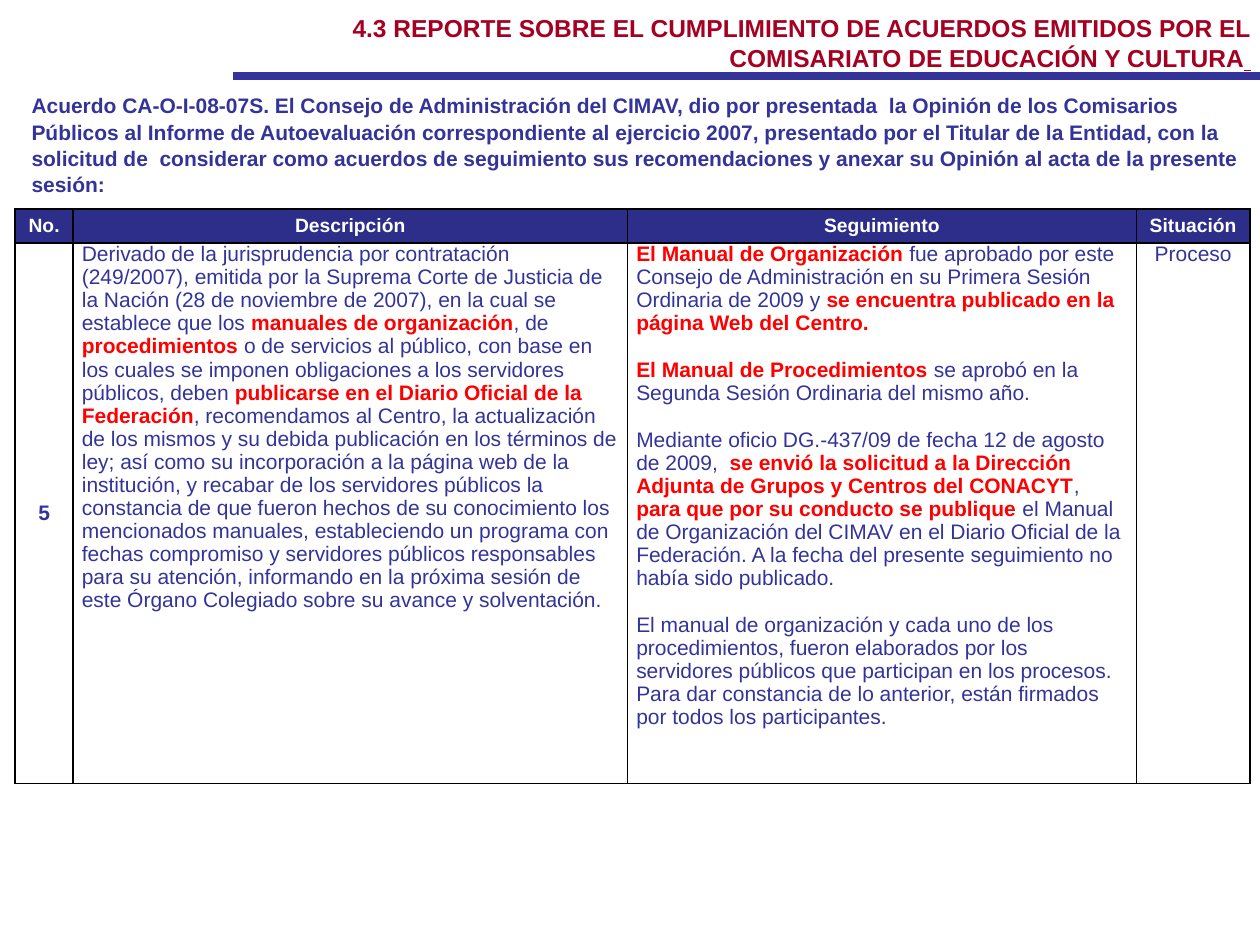
from lxml import etree
from pptx import Presentation
from pptx.dml.color import RGBColor
from pptx.enum.shapes import MSO_CONNECTOR as Connector
from pptx.enum.text import MSO_ANCHOR as Anchor, MSO_AUTO_SIZE as AutoSize, PP_ALIGN as Align
from pptx.oxml import parse_xml
from pptx.oxml.ns import nsdecls, qn
from pptx.util import Inches, Pt

BLUE, NAVY, RED, WINE, WHITE = "333399", "2D2D8A", "FF0000", "A50021", "FFFFFF"


def color(value):
    return RGBColor.from_string(value)


def write(frame, *lines, size=12, fill=BLUE, bold=False, align=Align.LEFT, spacing=1.0, gap=0):
    for row, line in enumerate(lines):
        para = frame.paragraphs[0] if row == 0 else frame.add_paragraph()
        properties = para._p.get_or_add_pPr()
        properties.set("marL", "0")
        properties.set("indent", "0")
        etree.SubElement(properties, qn("a:buNone"))
        para.alignment = align
        para.line_spacing = spacing
        para.space_before = Pt(gap if row else 0)
        for index, part in enumerate(line.split("*")):
            if part:
                strong = index % 2 == 1
                span = para.add_run()
                span.text = part
                span.font.name = "Arial"
                span.font.size = Pt(size)
                span.font.bold = bold or strong
                span.font.color.rgb = color(RED if strong else fill)


deck = Presentation()
deck.slide_width, deck.slide_height = Inches(10), Inches(7.5)
page = deck.slides.add_slide(deck.slide_layouts[1])
title, intro = page.placeholders

title.left, title.top, title.width, title.height = map(Inches, (1.99, 0.05, 8.04, 0.57))
intro.left, intro.top, intro.width, intro.height = map(Inches, (0.15, 0.69, 9.85, 0.91))
for box in (title, intro):
    box.text_frame.word_wrap = True
    box.text_frame.auto_size = AutoSize.NONE
    box.text_frame.vertical_anchor = Anchor.MIDDLE

write(
    title.text_frame,
    "4.3 REPORTE SOBRE EL CUMPLIMIENTO DE ACUERDOS EMITIDOS POR EL "
    "COMISARIATO DE EDUCACIÓN Y CULTURA",
    size=14, fill=WINE, bold=True, align=Align.RIGHT, spacing=1.03,
)
tail = title.text_frame.paragraphs[0].add_run()
tail.text = " "
tail.font.name = "Arial"
tail.font.size = Pt(14)
tail.font.underline = True
tail.font.color.rgb = color(WINE)

write(
    intro.text_frame,
    "Acuerdo CA-O-I-08-07S. El Consejo de Administración del CIMAV, dio por presentada  "
    "la Opinión de los Comisarios Públicos al Informe de Autoevaluación correspondiente "
    "al ejercicio 2007, presentado por el Titular de la Entidad, con la solicitud de  "
    "considerar como acuerdos de seguimiento sus recomendaciones y anexar su Opinión "
    "al acta de la presente sesión:",
    bold=True, spacing=1.05,
)

rule_top = Inches(0.6)
rule = page.shapes.add_connector(
    Connector.STRAIGHT, Inches(1.85), rule_top, deck.slide_width, rule_top)
rule.line.color.rgb = color(BLUE)
rule.line.width = Pt(4.5)
etree.SubElement(rule._element.spPr, qn("a:effectLst"))

description = " ".join([
    "Derivado de la jurisprudencia por contratación (249/2007), emitida por la Suprema "
    "Corte de Justicia de la Nación (28 de noviembre de 2007), en la cual se establece "
    "que los *manuales de organización*, de *procedimientos* o de servicios al público, "
    "con base en los cuales se imponen obligaciones a los servidores públicos, deben "
    "*publicarse en el Diario Oficial de la Federación*, recomendamos al Centro,",
    "la actualización de los mismos y su debida publicación en los términos de ley; así como "
    "su incorporación a la página web de la institución, y recabar de los servidores "
    "públicos la constancia de que fueron hechos de su conocimiento los mencionados "
    "manuales, estableciendo un programa con fechas compromiso y servidores públicos "
    "responsables para su atención, informando en la próxima sesión de este Órgano "
    "Colegiado sobre su avance y solventación.",
])
follow_up = [
    "*El Manual de Organización *fue aprobado por este Consejo de Administración en su "
    "Primera Sesión Ordinaria de 2009 y *se encuentra publicado en la página Web del Centro.*",
    "*El Manual de Procedimientos *se aprobó en la Segunda Sesión Ordinaria del mismo año.",
    "Mediante oficio DG.-437/09 de fecha 12 de agosto de 2009,  *se envió la solicitud a la "
    "Dirección Adjunta de Grupos y Centros del CONACYT*, *para que por su conducto se "
    "publique *el Manual de Organización del CIMAV en el Diario Oficial de la Federación. "
    "A la fecha del presente seguimiento no había sido publicado.",
    "El manual de organización y cada uno de los procedimientos, fueron elaborados por los "
    "servidores públicos que participan en los procesos. Para dar constancia de lo anterior, "
    "están firmados por todos los participantes.",
]
columns = [
    ("No.", 0.46, ["5"], Anchor.MIDDLE, dict(bold=True, align=Align.CENTER)),
    ("Descripción", 4.4, [description], Anchor.TOP, {}),
    ("Seguimiento", 4.04, follow_up, Anchor.TOP, dict(gap=13.5)),
    ("Situación", 0.9, ["Proceso"], Anchor.TOP, dict(align=Align.CENTER)),
]
heights = [0.27, 4.29]
table = page.shapes.add_table(
    2, len(columns), Inches(0.12), Inches(1.66),
    Inches(sum(column[1] for column in columns)), Inches(sum(heights))).table
for row, height in zip(table.rows, heights):
    row.height = Inches(height)

for index, (heading, width, body, anchor, style) in enumerate(columns):
    table.columns[index].width = Inches(width)
    head, cell = table.cell(0, index), table.cell(1, index)
    cell.margin_left = cell.margin_right = Inches(0.07)
    cell.margin_top = cell.margin_bottom = 0
    for box, fill, place in ((head, NAVY, Anchor.MIDDLE), (cell, WHITE, anchor)):
        for side in "LRTB":
            box._tc.get_or_add_tcPr().append(parse_xml(
                f'<a:ln{side} {nsdecls("a")} w="12700"><a:solidFill>'
                f'<a:srgbClr val="000000"/></a:solidFill></a:ln{side}>'))
        box.fill.solid()
        box.fill.fore_color.rgb = color(fill)
        box.vertical_anchor = place
    write(head.text_frame, heading, size=11, fill=WHITE, bold=True, align=Align.CENTER)
    write(cell.text_frame, *body, spacing=0.98, **style)

deck.save("out.pptx")
